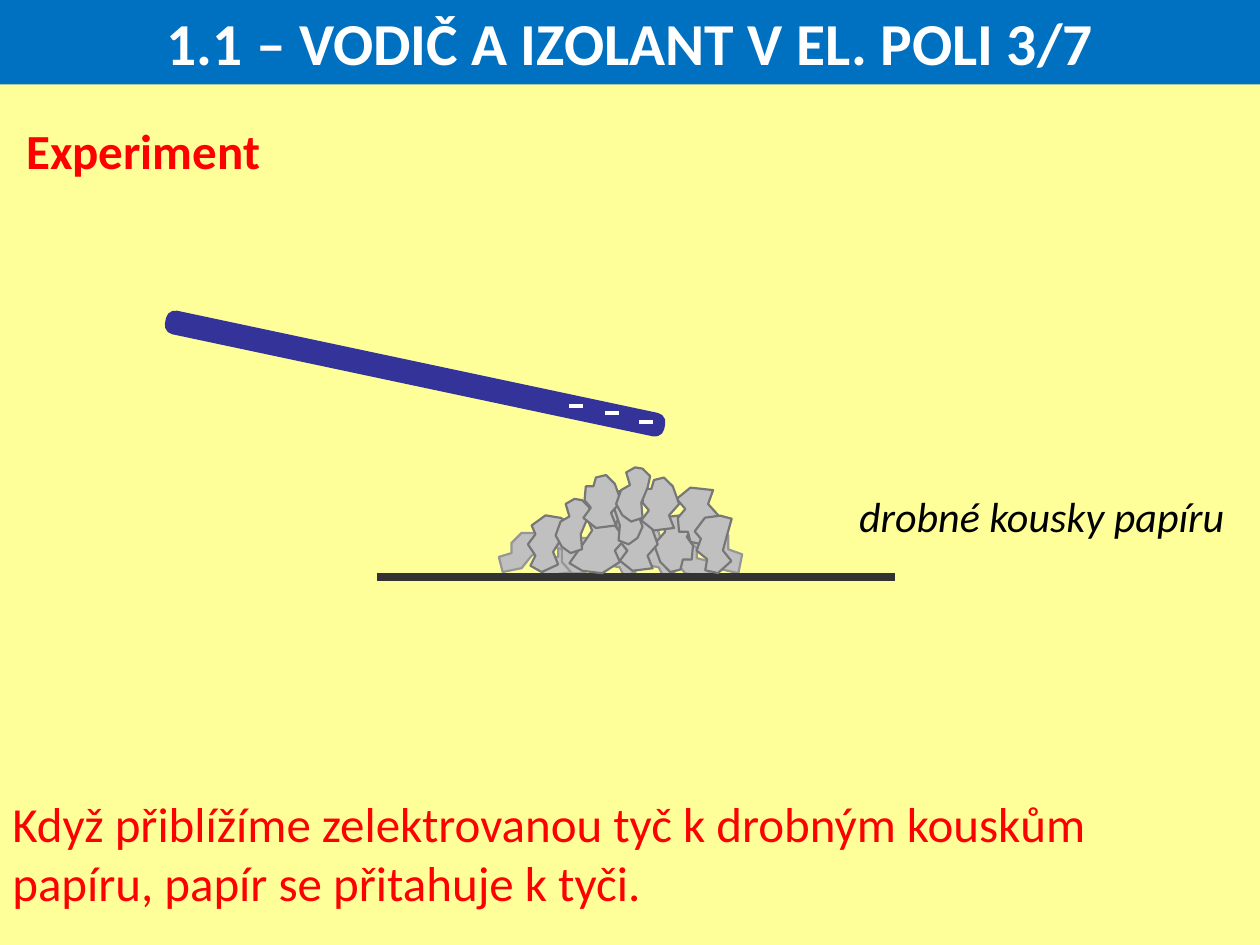
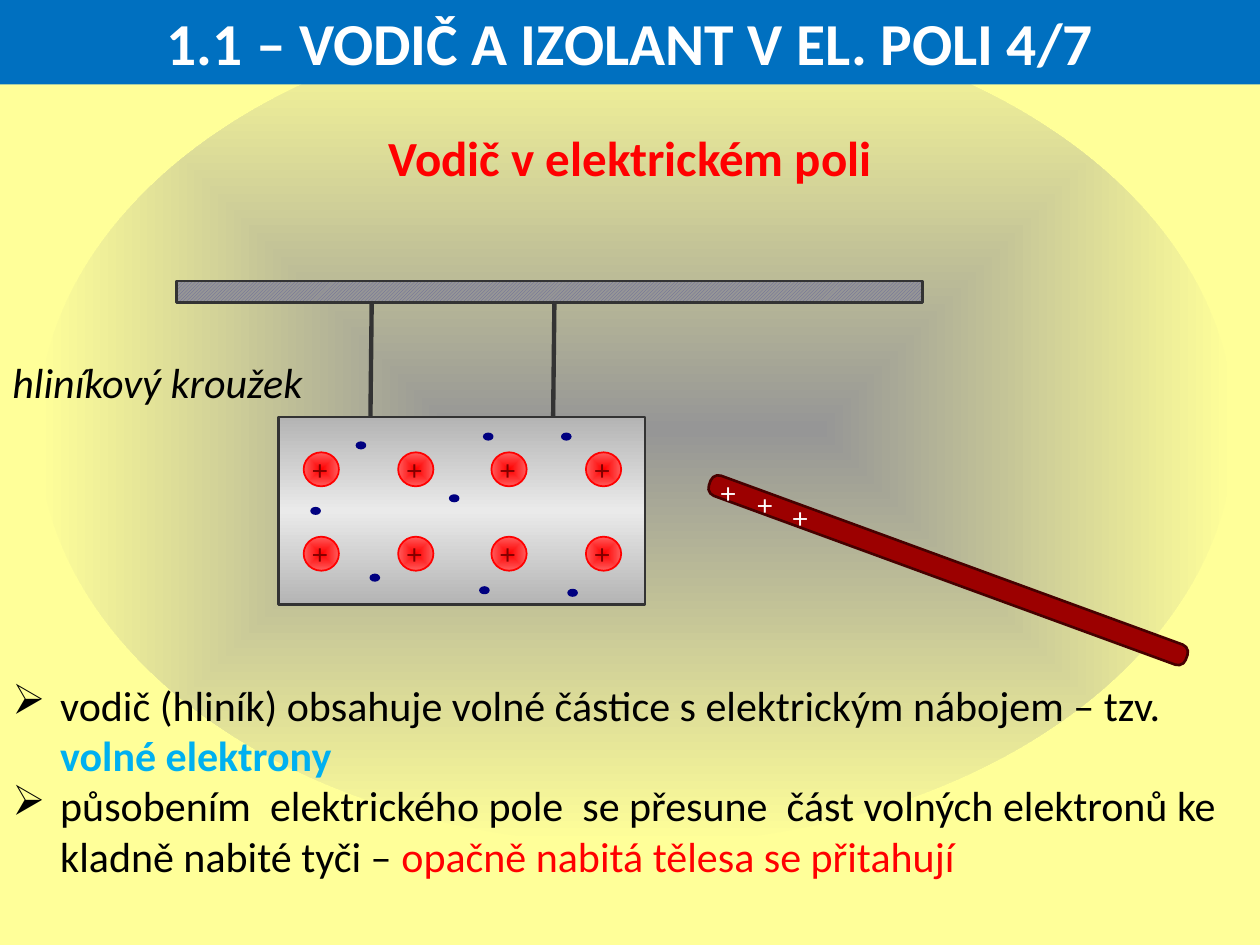
from lxml import etree
from pptx import Presentation
from pptx.dml.color import RGBColor
from pptx.enum.dml import MSO_PATTERN as Pattern
from pptx.enum.shapes import MSO_CONNECTOR as Connector, MSO_SHAPE as Shape
from pptx.enum.text import MSO_ANCHOR as Anchor, MSO_AUTO_SIZE as AutoSize, PP_ALIGN as Align
from pptx.oxml import parse_xml
from pptx.oxml.ns import nsdecls, qn
from pptx.util import Pt

PX = 9144  # EMU in one px; 100 px make an inch
WIDTH, HEIGHT = 1000, 750

YELLOW, BLUE, WHITE, BLACK = "FFFF99", "0070C0", "FFFFFF", "000000"
RED, CYAN, NAVY, MAROON = "FF0000", "00B0F0", "000080", "800000"
DARK, GREY, PAPER = "333333", "969696", "C0C0C0"
BACK_EDGE, FRONT_EDGE = GREY, "777777"


def rgb(color):
    return RGBColor.from_string(color)


def write(para, text, font="Calibri", size=24, color=BLACK, bold=False, italic=False):
    span = para.add_run()
    span.text = text
    span.font.name, span.font.size = font, Pt(size)
    span.font.bold, span.font.italic = bold, italic
    span.font.color.rgb = rgb(color)


class Deck:
    """Holds the shared style and the slide being drawn."""

    def __init__(self):
        self.show = Presentation()
        self.show.slide_width, self.show.slide_height = WIDTH * PX, HEIGHT * PX
        self.page = None

    def new_page(self):
        self.page = self.show.slides.add_slide(self.show.slide_layouts[6])
        self.page.background.fill.solid()
        self.page.background.fill.fore_color.rgb = rgb(YELLOW)

    def finish(self, item, fill=None, line=None, weight=1.5):
        item.shadow.inherit = False
        if fill:
            item.fill.solid()
            item.fill.fore_color.rgb = rgb(fill)
        if line:
            item.line.color.rgb = rgb(line)
            item.line.width = Pt(weight)
        else:
            item.line.fill.background()
        return item

    def shape(self, kind, frame, turn=0, **look):
        item = self.page.shapes.add_shape(kind, *(n * PX for n in frame))
        item.rotation = turn
        return self.finish(item, **look)

    def gradient(self, item, colors, direction):
        step = 100000 // (len(colors) - 1)
        stops = "".join(
            f'<a:gs pos="{i * step}"><a:srgbClr val="{color}"/></a:gs>'
            for i, color in enumerate(colors))
        fill = parse_xml(f'<a:gradFill {nsdecls("a")} rotWithShape="1">'
                         f'<a:gsLst>{stops}</a:gsLst>{direction}</a:gradFill>')
        item.element.spPr.find(qn("a:prstGeom")).addnext(fill)

    def radial(self, item, *colors):
        self.gradient(item, colors, '<a:path path="shape"><a:fillToRect '
                                    'l="50000" t="50000" r="50000" b="50000"/></a:path>')

    def vertical(self, item, *colors):
        self.gradient(item, colors, '<a:lin ang="5400000" scaled="0"/>')

    def rod(self, frame, turn, fill, line):
        item = self.shape(Shape.ROUNDED_RECTANGLE, frame, turn, fill=fill, line=line)
        item.adjustments[0] = 0.38

    def scrap(self, outline, left, top, flip="", size=None, turn=0, **look):
        """Draws an outline, flipped along x or y and stretched to the size."""
        wide, high = (max(axis) for axis in zip(*outline))
        width, height = size or (wide, high)
        corners = [(left + (wide - x if "x" in flip else x) * width / wide,
                    top + (high - y if "y" in flip else y) * height / high)
                   for x, y in outline]
        builder = self.page.shapes.build_freeform(*corners[0], scale=PX)
        builder.add_line_segments(corners[1:], close=True)
        item = self.finish(builder.convert_to_shape(), fill=PAPER, weight=1.25, **look)
        item.rotation = turn

    def line(self, start, end, color, weight):
        item = self.page.shapes.add_connector(
            Connector.STRAIGHT, *(n * PX for n in start + end))
        item.line.color.rgb = rgb(color)
        item.line.width = Pt(weight)
        etree.SubElement(item.element.spPr, qn("a:effectLst"))

    def text(self, frame, *paragraphs, wrap=True, align=Align.LEFT, bullet=None, **style):
        """Each paragraph is a string or a list of (text, format changes)."""
        box = self.page.shapes.add_textbox(*(n * PX for n in frame)).text_frame
        box.word_wrap, box.auto_size = wrap, AutoSize.SHAPE_TO_FIT_TEXT
        for i, spans in enumerate(paragraphs):
            para = box.add_paragraph() if i else box.paragraphs[0]
            para.alignment = align
            if bullet:
                self.bullet(para, bullet)
            for words, changes in [(spans, {})] if isinstance(spans, str) else spans:
                write(para, words, **{**style, **changes})

    def bullet(self, para, sign, indent=38):
        props = para._p.get_or_add_pPr()
        props.set("marL", str(indent * PX))
        props.set("indent", str(-indent * PX))
        etree.SubElement(props, qn("a:buChar")).set("char", sign)

    def title(self, number):
        band = self.shape(Shape.RECTANGLE, (0, 0, WIDTH, 67), fill=BLUE).text_frame
        band.vertical_anchor = Anchor.MIDDLE
        band.paragraphs[0].alignment = Align.CENTER
        write(band.paragraphs[0], f"1.1 – VODIČ A IZOLANT V EL. POLI {number}/7",
              size=34, color=WHITE, bold=True)

    def plus(self, left, top, color):
        self.text((left, top, 37, 40), "+", wrap=False,
                  font="Montserrat", size=18, color=color)


# Four outlines of torn paper
CHUNK = [(6, 26), (0, 34), (10, 42), (26, 40), (22, 30), (30, 21),
         (25, 7), (18, 0), (10, 2), (8, 9), (2, 9), (1, 20)]
CURL = [(11, 14), (8, 4), (15, 0), (21, 1), (27, 7), (25, 16),
        (20, 28), (21, 40), (12, 43), (5, 38), (0, 29), (4, 18)]
SLAB = [(6, 32), (2, 40), (11, 45), (24, 39), (20, 29), (25, 21),
        (34, 7), (26, 2), (14, 0), (3, 8), (6, 15), (0, 23)]
WEDGE = [(10, 16), (0, 19), (3, 31), (18, 28), (26, 18),
         (37, 14), (36, 4), (28, 0), (18, 0), (10, 8)]

# Paper heap: outline, left, top, then flip, size and turn where needed
BACK_SCRAPS = [
    (WEDGE, 547, 415, "x", (42, 40)),
    (WEDGE, 427, 427, "", (58, 30)),
    (WEDGE, 396, 423),
    (SLAB, 476, 415, "", (30, 43), 310),
    (WEDGE, 522, 427, "x", (43, 31)),
    (SLAB, 507, 415, "", (30, 43), 310),
    (WEDGE, 437, 419, "y", (34, 36)),
]
FRONT_SCRAPS = [
    (CHUNK, 519, 409, "xy", (32, 45)),
    (CHUNK, 492, 411),
    (SLAB, 452, 402, "xy", (44, 53)),
    (CURL, 486, 389, "x", (24, 43)),
    (SLAB, 419, 409),
    (CURL, 441, 396),
    (CHUNK, 537, 387, "y", (34, 45)),
    (CHUNK, 509, 379),
    (CHUNK, 463, 377),
    (SLAB, 552, 409, "", None, 343),
    (CURL, 489, 371),
]
# Top left corners of the free electrons
ELECTRONS = [(283, 351), (247, 403), (294, 456), (357, 393),
             (384, 344), (381, 466), (451, 468), (446, 344)]


def experiment_page(deck):
    deck.new_page()
    deck.text((0, 625, WIDTH, 104), "Když přiblížíme zelektrovanou tyč k drobným kouskům",
              "papíru, papír se přitahuje k tyči.", size=28, color=RED)
    deck.text((672, 384, 313, 51), "drobné kousky papíru", wrap=False, italic=True)

    # Negatively charged rod
    deck.rod((128, 288, 403, 17), 12, "333399", "333399")
    for i in range(3):
        left, top = round(452 + 27.5 * i), round(322 + 6.5 * i)
        deck.line((left, top), (left + 11, top), WHITE, 2.25)

    # Heap of paper on the table
    for scrap in BACK_SCRAPS:
        deck.scrap(*scrap, line=BACK_EDGE)
    deck.line((299, 458), (710, 458), DARK, 4.5)
    for scrap in FRONT_SCRAPS:
        deck.scrap(*scrap, line=FRONT_EDGE)

    deck.title(3)
    deck.text((11, 91, 208, 57), "Experiment", wrap=False, size=28, color=RED, bold=True)


def conductor_page(deck):
    deck.new_page()
    deck.radial(deck.shape(Shape.OVAL, (30, 11, 950, 659)), GREY, YELLOW)
    deck.text((0, 96, WIDTH, 57), "Vodič v elektrickém poli", align=Align.CENTER,
              size=28, color=RED, bold=True)
    deck.text(
        (0, 534, WIDTH, 172),
        [("vodič (hliník) obsahuje volné částice s elektrickým nábojem – tzv. ", {}),
         ("volné elektrony", {"color": CYAN, "bold": True})],
        [("působením  elektrického pole  se přesune  část volných elektronů ke "
          "kladně nabité tyči – ", {}),
         ("opačně nabitá tělesa se přitahují", {"color": RED})],
        bullet="➢")

    # Ring hung from a beam
    beam = deck.shape(Shape.RECTANGLE, (140, 223, 592, 17), line=DARK)
    beam.fill.patterned()
    beam.fill.pattern = Pattern.DARK_UPWARD_DIAGONAL
    beam.fill.fore_color.rgb, beam.fill.back_color.rgb = rgb("666699"), rgb(GREY)
    for left in (294, 439):
        deck.line((left, 332), (left + 1, 240), DARK, 2.5)
    ring = deck.shape(Shape.RECTANGLE, (221, 331, 291, 149), line=DARK)
    deck.vertical(ring, "B4B4B4", "EAEAEA", "B4B4B4")

    # Positive ions in a grid, four by two
    for row in range(2):
        for column in range(4):
            left, top = round(241 + 74.6 * column), 359 + 67 * row
            ion = deck.shape(Shape.OVAL, (left, top, 28, 27), line=RED, weight=1)
            deck.radial(ion, RED, "FF5C5C")
            deck.plus(left - 4, top - 6, MAROON)

    # Positively charged rod and the free electrons
    deck.rod((551, 444, 403, 17), 200.1, "9C0000", "460000")
    for i in range(3):
        deck.plus(round(561 + 28.5 * i), 371 + 10 * i, WHITE)
    for left, top in ELECTRONS:
        deck.shape(Shape.OVAL, (left, top, 7, 5), fill=NAVY, line=NAVY, weight=1)

    deck.title(4)
    deck.text((0, 278, 276, 51), "hliníkový kroužek", italic=True)


def main():
    deck = Deck()
    experiment_page(deck)
    conductor_page(deck)
    deck.show.save("out.pptx")


if __name__ == "__main__":
    main()
